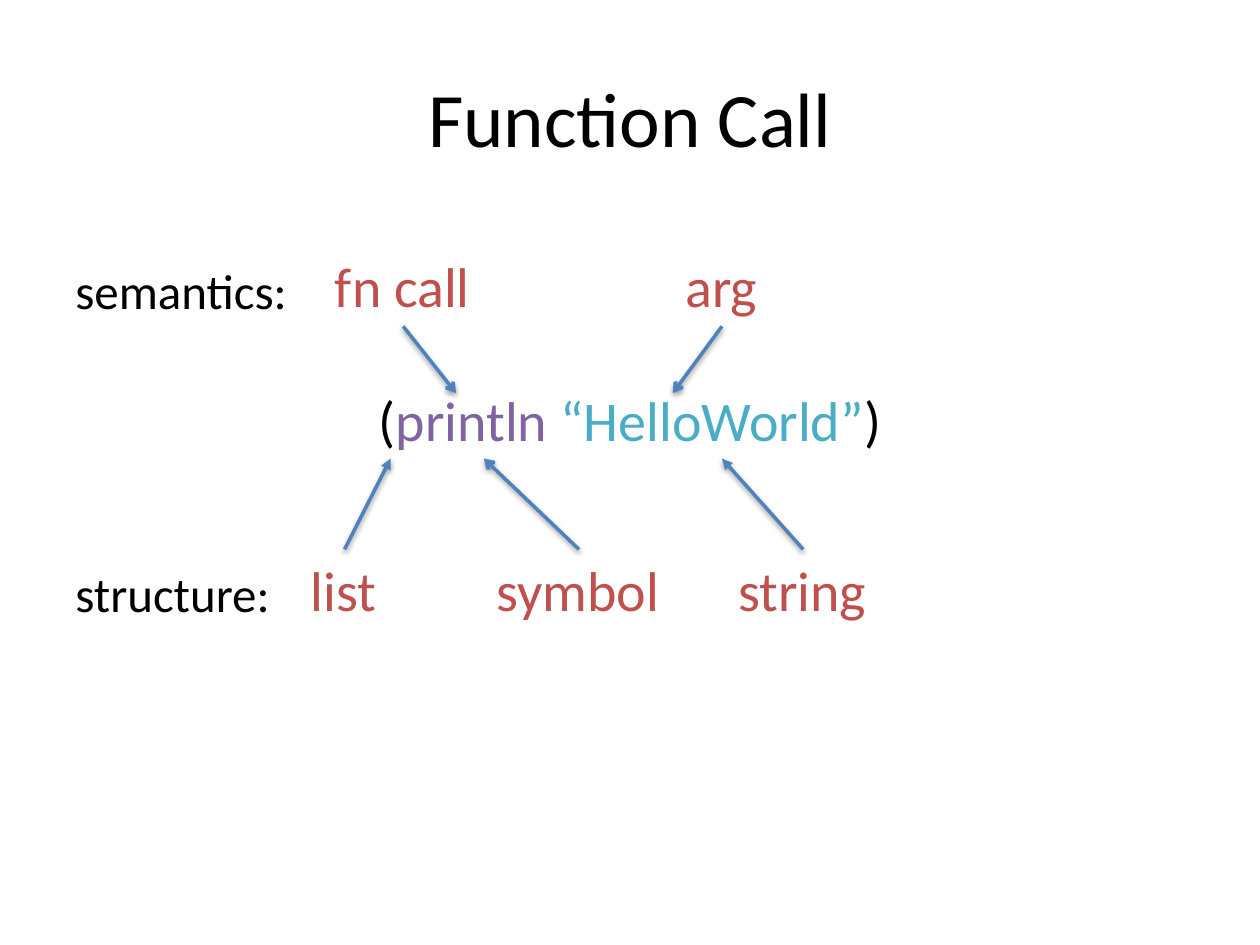
"""Build the Function Call slide: an expression with its semantics and structure."""
from dataclasses import dataclass

from lxml.etree import SubElement
from pptx import Presentation
from pptx.dml.color import RGBColor
from pptx.enum.shapes import MSO_CONNECTOR
from pptx.enum.text import MSO_ANCHOR, PP_ALIGN
from pptx.oxml import parse_xml
from pptx.oxml.ns import qn
from pptx.shapes.autoshape import Shape
from pptx.slide import Slide
from pptx.util import Inches, Pt

BLACK, RED, BLUE = "000000", "C0504D", "4F81BD"
PURPLE, TEAL = "8064A2", "4BACC6"
TOP_SIDE, BOTTOM_SIDE = 0, 2
SHADOW = (
    '<a:effectLst xmlns:a="http://schemas.openxmlformats.org/drawingml/2006/main">'
    '<a:outerShdw blurRad="40000" dist="20000" dir="5400000" rotWithShape="0">'
    '<a:srgbClr val="000000"><a:alpha val="38000"/></a:srgbClr>'
    "</a:outerShdw></a:effectLst>"
)


@dataclass
class Row:
    caption: str
    caption_top: float
    label_top: float
    target_top: float
    side: int


@dataclass
class Label:
    text: str
    row: Row
    left: float
    width: float
    target_left: float
    arrowhead: str


SEMANTICS = Row("semantics:", 2.02, 1.95, 3.12, BOTTOM_SIDE)
STRUCTURE = Row("structure:", 4.42, 4.36, 3.64, TOP_SIDE)
LABELS = [
    Label("fn call", SEMANTICS, 2.56, 1.28, 3.62, "arrow"),
    Label("arg", SEMANTICS, 5.34, 0.78, 5.34, "arrow"),
    Label("list", STRUCTURE, 2.37, 0.73, 3.1, "triangle"),
    Label("symbol", STRUCTURE, 3.84, 1.51, 3.84, "arrow"),
    Label("string", STRUCTURE, 5.76, 1.23, 5.73, "triangle"),
]
EXPRESSION = [("(", BLACK), ("println ", PURPLE), ("“HelloWorld”", TEAL), (")", BLACK)]


def color(value: str) -> RGBColor:
    """Turn a hex string into a colour."""
    return RGBColor.from_string(value)


def write_runs(shape: Shape, runs: list, size: int, alignment: PP_ALIGN) -> None:
    """Write coloured runs into the first paragraph of a shape."""
    paragraph = shape.text_frame.paragraphs[0]
    paragraph.alignment = alignment
    for text, value in runs:
        run = paragraph.add_run()
        run.text = text
        for name, setting in {"name": "Calibri", "size": Pt(size)}.items():
            setattr(run.font, name, setting)
        run.font.color.rgb = color(value)


def add_text(slide: Slide, box: tuple, runs: list, size: int,
             alignment: PP_ALIGN = PP_ALIGN.LEFT, wrap: bool = True) -> Shape:
    """Add a text box and return it."""
    shape = slide.shapes.add_textbox(*map(Inches, box))
    shape.text_frame.word_wrap = wrap
    write_runs(shape, runs, size, alignment)
    return shape


def add_arrow(slide: Slide, label: Label, shape: Shape) -> None:
    """Draw a shadowed arrow from a label to its part of the expression."""
    connector = slide.shapes.add_connector(
        MSO_CONNECTOR.STRAIGHT, shape.left, shape.top,
        Inches(label.target_left), Inches(label.row.target_top))
    connector.begin_connect(shape, label.row.side)
    connector.line.width = Pt(2)
    connector.line.color.rgb = color(BLUE)
    properties = connector.element.spPr
    SubElement(properties.find(qn("a:ln")), qn("a:tailEnd"), type=label.arrowhead)
    properties.append(parse_xml(SHADOW))


def main() -> None:
    """Build and save the presentation."""
    presentation = Presentation()
    presentation.slide_width, presentation.slide_height = Inches(10), Inches(7.5)
    slide = presentation.slides.add_slide(presentation.slide_layouts[5])

    title = slide.shapes.title
    placement = {"left": 0.5, "top": 0.3, "width": 9, "height": 1.25}
    for name, length in placement.items():
        setattr(title, name, Inches(length))
    title.text_frame.vertical_anchor = MSO_ANCHOR.MIDDLE
    write_runs(title, [("Function Call", BLACK)], 44, PP_ALIGN.CENTER)

    add_text(slide, (0.5, 3.01, 9, 0.64), EXPRESSION, 32, PP_ALIGN.CENTER)
    for row in (SEMANTICS, STRUCTURE):
        add_text(slide, (0.5, row.caption_top, 1.9, 0.57), [(row.caption, BLACK)], 28)
    for label in LABELS:
        box = (label.left, label.row.label_top, label.width, 0.64)
        shape = add_text(slide, box, [(label.text, RED)], 32, wrap=False)
        add_arrow(slide, label, shape)

    presentation.save("out.pptx")


if __name__ == "__main__":
    main()
